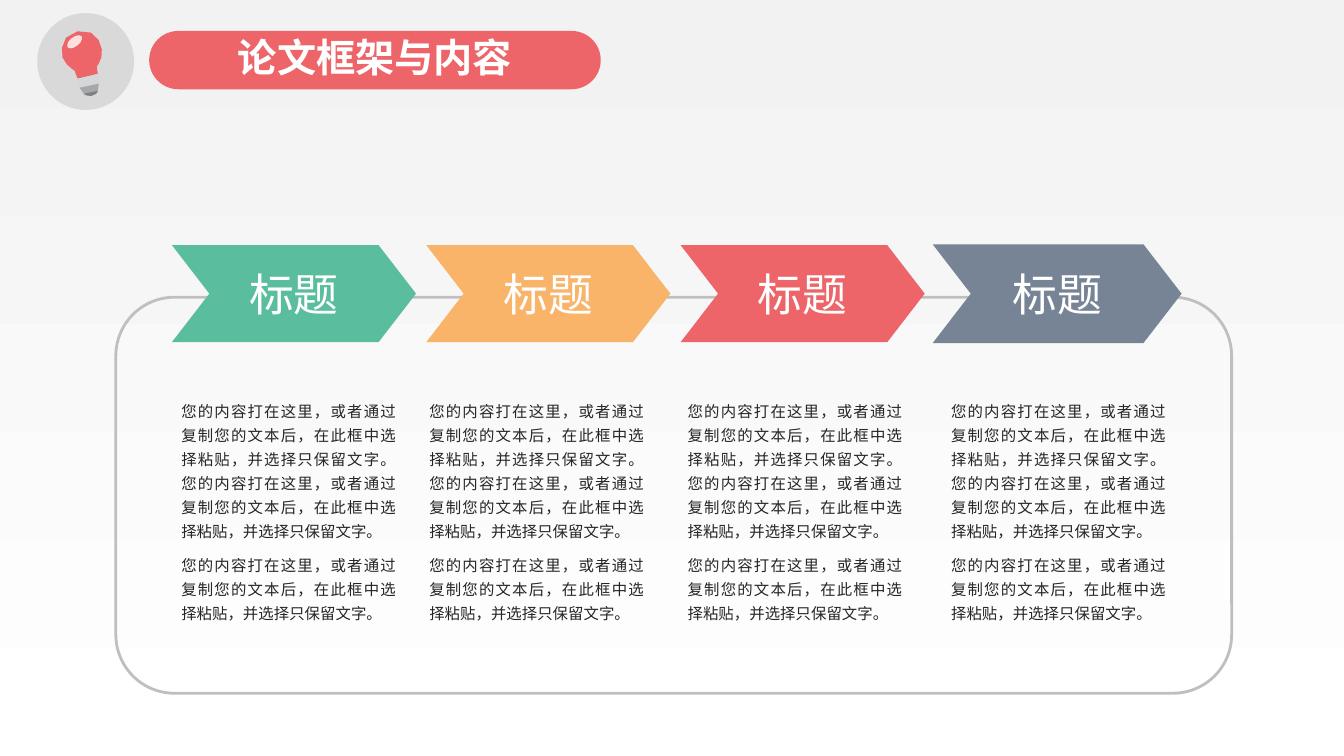
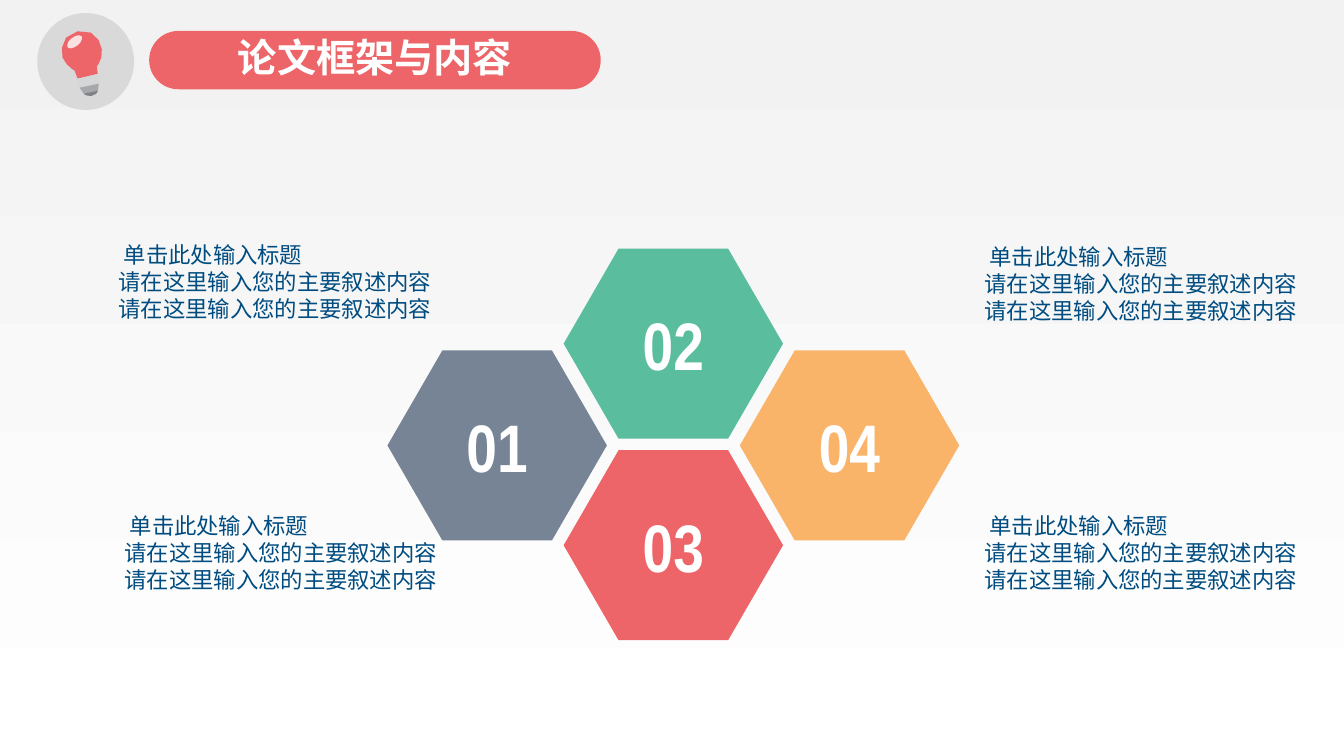
from dataclasses import dataclass

from lxml import etree
from pptx import Presentation
from pptx.dml.color import RGBColor
from pptx.enum import shapes, text
from pptx.oxml.ns import qn
from pptx.util import Cm, Pt


@dataclass(frozen=True)
class Theme:
    red: str = "ED6568"
    green: str = "5ABE9E"
    orange: str = "F9B46A"
    slate: str = "778495"
    white: str = "FFFFFF"
    backdrop: str = "F2F2F2"
    disc: str = "D9D9D9"
    frame: str = "BFBFBF"
    ink: str = "262626"
    navy: str = "004C80"
    glint: str = "FBE0E1"
    collar: str = "D4D6D7"
    socket: str = "A6A8AB"
    tip: str = "808184"
    chinese: str = "Noto Sans CJK SC"
    digits: str = "Arial Narrow"
    title_size: int = 28
    chevron_size: int = 32
    number_size: int = 48
    caption_size: int = 16
    body_size: int = 11


THEME = Theme()
KIND = shapes.MSO_SHAPE
ALIGN = text.PP_ALIGN
ANCHOR = text.MSO_ANCHOR

TITLE = "论文框架与内容"
SENTENCE = "您的内容打在这里，或者通过复制您的文本后，在此框中选择粘贴，并选择只保留文字。"
CAPTION = ["单击此处输入标题"] + ["请在这里输入您的主要叙述内容"] * 2

# Bulb outlines on a 96-unit square: pairs are corners, sextuples are Bézier curves.
GLASS = [(40, 18), (24, 21, 23, 36, 25, 44), (28, 52, 37, 57, 37, 57), (40, 65), (60, 60),
         (59, 53), (59, 53, 66, 44, 64, 36), (63, 27, 56, 15, 40, 18)]
GLINT = [(44, 23), (45, 25, 44, 29, 40, 32), (36, 35, 32, 36, 30, 34),
         (29, 32, 30, 28, 34, 25), (38, 22, 42, 21, 44, 23)]
COLLAR = [(60, 65), (41, 69), (39, 67), (40, 65), (59, 61), (62, 62), (60, 65)]
SOCKET = [(52, 72), (42, 74), (46, 80), (53, 79), (60, 77), (61, 70)]
TIP = [(46, 80), (46, 80, 49, 83, 54, 82), (60, 81, 60, 77, 60, 77)]


def rgb(color):
    return RGBColor.from_string(color)


def write(frame, *lines, size, color, font=THEME.chinese, bold=False, align=ALIGN.LEFT,
          anchor=ANCHOR.TOP, wrap=True, insets=(0.25, 0.13), spacing=None, gap=0,
          first_indent=0):
    """Fill a text frame with one paragraph per line; lengths in cm, gap in points."""
    frame.word_wrap = wrap
    frame.auto_size = text.MSO_AUTO_SIZE.NONE
    frame.vertical_anchor = anchor
    frame.margin_left = frame.margin_right = Cm(insets[0])
    frame.margin_top = frame.margin_bottom = Cm(insets[1])
    for index, line in enumerate(lines):
        paragraph = frame.add_paragraph() if index else frame.paragraphs[0]
        paragraph.alignment = align
        if spacing:
            paragraph.line_spacing = spacing
        if index:
            paragraph.space_before = Pt(gap)
        elif first_indent:
            paragraph._p.get_or_add_pPr().set("marL", str(Cm(first_indent)))
        run = paragraph.add_run()
        run.text = line
        run.font.size, run.font.bold, run.font.name = Pt(size), bold, font
        run.font.color.rgb = rgb(color)
        east_asian = etree.SubElement(run._r.get_or_add_rPr(), qn("a:ea"))
        east_asian.set("typeface", font)


def paint(shape, fill=None, line=None, width=2):
    shape.shadow.inherit = False
    if fill:
        shape.fill.solid()
        shape.fill.fore_color.rgb = rgb(fill)
    else:
        shape.fill.background()
    if line:
        shape.line.color.rgb = rgb(line)
        shape.line.width = Pt(width)
    else:
        shape.line.fill.background()


def add_block(slide, kind, left, top, width, height, adjust=None, **look):
    block = slide.shapes.add_shape(kind, Cm(left), Cm(top), Cm(width), Cm(height))
    if adjust is not None:
        block.adjustments[0] = adjust
    paint(block, **look)
    return block


def add_text(slide, left, top, width, height, *lines, **style):
    box = slide.shapes.add_textbox(Cm(left), Cm(top), Cm(width), Cm(height))
    write(box.text_frame, *lines, **style)


def flatten(outline, steps=3):
    """Turn corners and cubic curves into a list of points."""
    points = [outline[0]]
    for part in outline[1:]:
        if len(part) == 2:
            points.append(part)
            continue
        nodes = [points[-1], part[:2], part[2:4], part[4:]]
        for step in range(1, steps + 1):
            t = step / steps
            weights = ((1 - t) ** 3, 3 * t * (1 - t) ** 2, 3 * t * t * (1 - t), t ** 3)
            points.append(tuple(sum(w * node[axis] for w, node in zip(weights, nodes))
                                for axis in (0, 1)))
    return points


def add_bulb(slide, left, top, size):
    add_block(slide, KIND.OVAL, left, top, size, size, fill=THEME.disc)
    parts = [(GLASS, THEME.red, 0, 0), (GLINT, THEME.glint, 0, 0),
             (COLLAR, THEME.collar, 0, 0), (COLLAR, THEME.collar, 1, 5),
             (SOCKET, THEME.socket, 0, 0), (TIP, THEME.tip, 0, 0)]
    unit = size / 96
    for outline, color, dx, dy in parts:
        points = [(Cm(left + (x + dx) * unit), Cm(top + (y + dy) * unit))
                  for x, y in flatten(outline)]
        builder = slide.shapes.build_freeform(*points[0])
        builder.add_line_segments(points[1:], close=True)
        paint(builder.convert_to_shape(), fill=color)


def add_header(slide, left, top, width, height):
    add_block(slide, KIND.ROUNDED_RECTANGLE, left, top, width, height, 0.5, fill=THEME.red)
    title = slide.shapes.title
    title.left, title.top = Cm(left + 1), Cm(top - 0.08)
    title.width, title.height = Cm(width - 2), Cm(height)
    write(title.text_frame, TITLE, size=THEME.title_size, color=THEME.white, bold=True,
          align=ALIGN.CENTER, anchor=ANCHOR.MIDDLE)
    title.element.getparent().append(title.element)  # bring in front of the band


def new_slide(deck):
    slide = deck.slides.add_slide(deck.slide_layouts[5])
    add_bulb(slide, 0.94, 0.33, 2.44)
    add_header(slide, 3.76, 0.78, 11.38, 1.47)
    return slide


def add_process(slide, left, top, width, height):
    """Frame with four chevrons across its top edge and a text column under each."""
    add_block(slide, KIND.ROUNDED_RECTANGLE, left, top, width, height, 0.148,
              line=THEME.frame)
    steps = [(THEME.green, 1, 1.65), (THEME.orange, 1, 7.9),
             (THEME.red, 1, 14.41), (THEME.slate, 1.02, 21.05)]
    for index, (color, scale, column) in enumerate(steps):
        chevron_width, chevron_height = 6.15 * scale, 2.44 * scale
        center = left + 4.49 + index * 6.41
        chevron = add_block(slide, KIND.CHEVRON, center - chevron_width / 2,
                            top - 0.09 - chevron_height / 2, chevron_width, chevron_height,
                            0.386, fill=color)
        write(chevron.text_frame, "标题", size=THEME.chevron_size, color=THEME.white,
              align=ALIGN.CENTER, anchor=ANCHOR.MIDDLE, wrap=False)
        add_text(slide, left + column, top + 2.37, 5.41, 6.02, SENTENCE * 2, SENTENCE,
                 size=THEME.body_size, color=THEME.ink, align=ALIGN.JUSTIFY,
                 insets=(0, 0.13), spacing=1.3, gap=7)


def add_honeycomb(slide, center_x, center_y):
    width, height, across, down = 5.53, 4.79, 4.44, 2.54
    cells = [("01", THEME.slate, -1, 0.01), ("02", THEME.green, 0, -1),
             ("03", THEME.red, 0, 1), ("04", THEME.orange, 1, 0.01)]
    for number, color, column, row in cells:
        cell = add_block(slide, KIND.HEXAGON, center_x + column * across - width / 2,
                         center_y + row * down - height / 2, width, height, 0.289,
                         fill=color)
        write(cell.text_frame, number, size=THEME.number_size, color=THEME.white,
              font=THEME.digits, bold=True, align=ALIGN.CENTER, anchor=ANCHOR.MIDDLE,
              wrap=False, insets=(0, 0))


def add_captions(slide):
    for left, top in [(2.74, 5.95), (24.56, 6), (2.89, 12.78), (24.56, 12.78)]:
        add_text(slide, left, top, 8.41, 3, *CAPTION, size=THEME.caption_size,
                 color=THEME.navy, wrap=False, first_indent=0.13)


def set_background(master):
    fill = master.background.fill
    fill.gradient()
    fill.gradient_angle = 270
    for stop, color in zip(fill.gradient_stops, (THEME.backdrop, THEME.white)):
        stop.color.rgb = rgb(color)


def main():
    deck = Presentation()
    deck.slide_width, deck.slide_height = Cm(33.87), Cm(19.05)
    set_background(deck.slide_master)
    add_process(new_slide(deck), 2.92, 7.49, 28.12, 9.98)
    hexagons = new_slide(deck)
    add_honeycomb(hexagons, 16.97, 11.2)
    add_captions(hexagons)
    deck.save("out.pptx")


if __name__ == "__main__":
    main()
